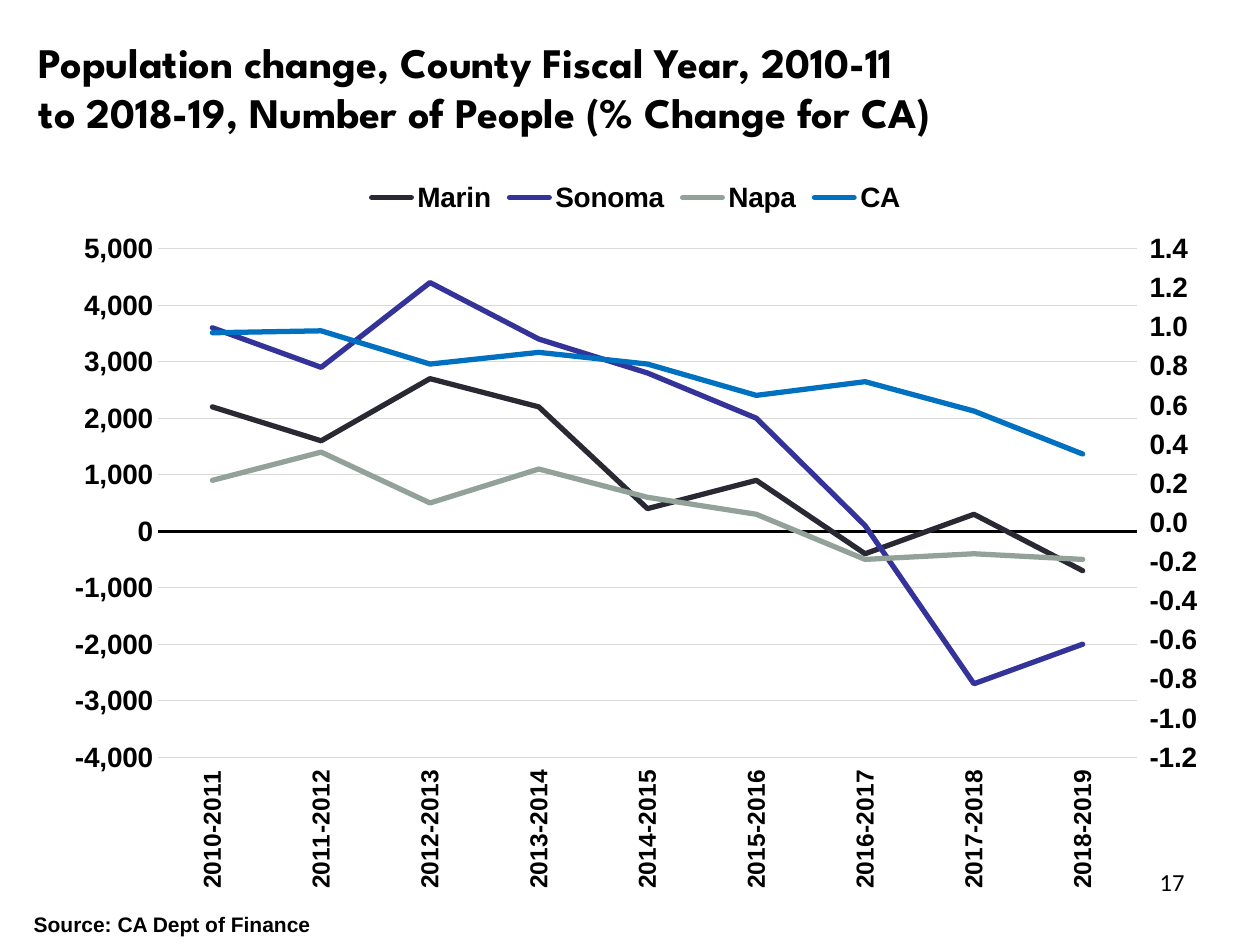
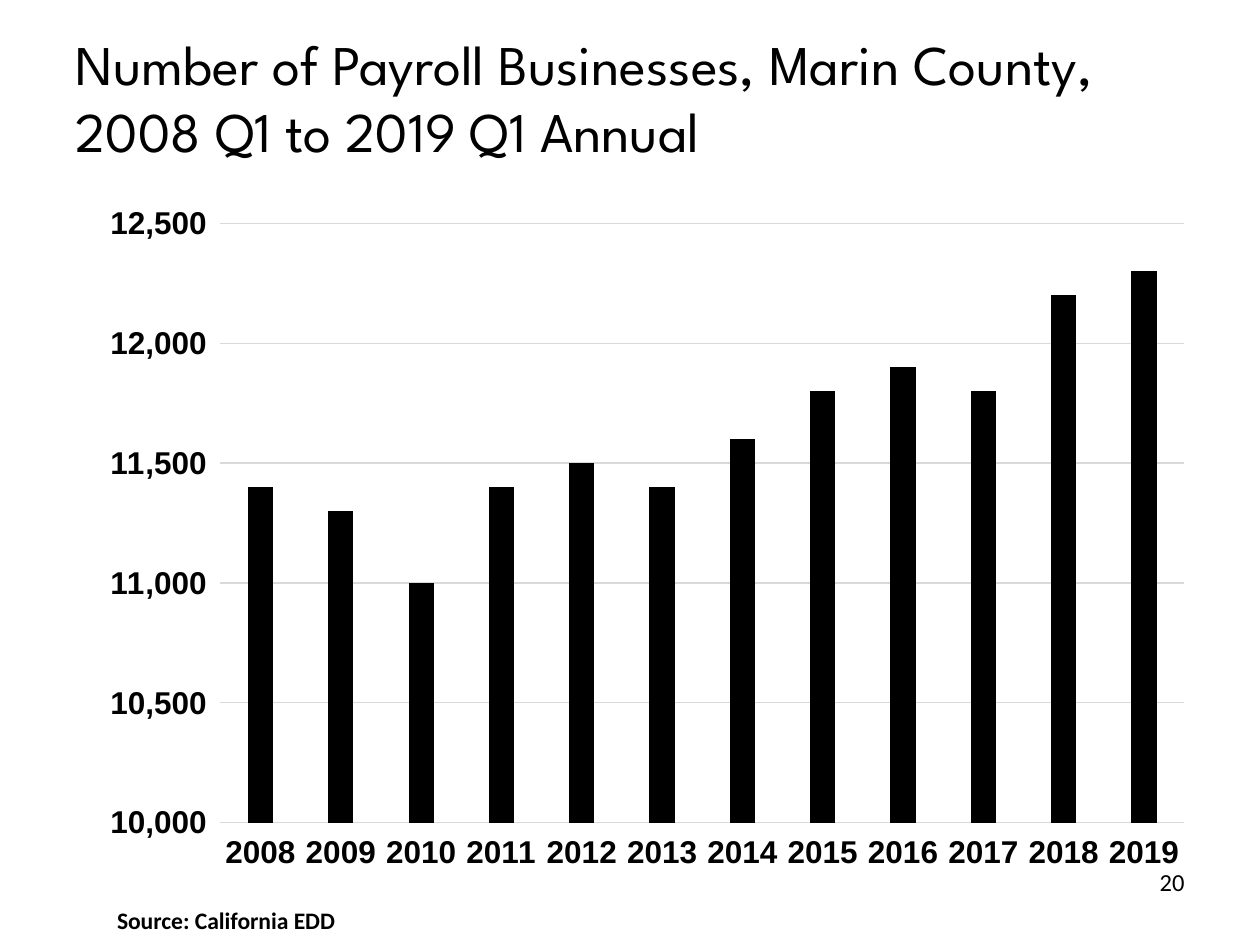
"""Build two county statistics slides: population change and payroll businesses."""
from copy import deepcopy

from lxml.etree import SubElement
from pptx import Presentation
from pptx.chart.axis import CategoryAxis, ValueAxis
from pptx.chart.data import CategoryChartData
from pptx.dml.color import RGBColor
from pptx.enum.chart import XL_CHART_TYPE as ChartType
from pptx.enum.chart import XL_LEGEND_POSITION as LegendPosition
from pptx.enum.chart import XL_TICK_LABEL_POSITION as LabelPosition
from pptx.enum.chart import XL_TICK_MARK as TickMark
from pptx.enum.text import MSO_ANCHOR as Anchor
from pptx.enum.text import MSO_AUTO_SIZE as AutoSize
from pptx.enum.text import PP_ALIGN as Align
from pptx.oxml.ns import qn
from pptx.util import Cm, Pt

COLORS = {
    "ink": "000000",
    "grid": "D9D9D9",
    "Marin": "292934",
    "Sonoma": "333399",
    "Napa": "93A299",
    "CA": "0070C0",
}
TITLE_FONT, CHART_FONT, NOTE_FONT = "League Spartan", "Arial", "Calibri"

POPULATION = {
    "Marin": (2200, 1600, 2700, 2200, 400, 900, -400, 300, -700),
    "Sonoma": (3600, 2900, 4400, 3400, 2800, 2000, 100, -2700, -2000),
    "Napa": (900, 1400, 500, 1100, 600, 300, -500, -400, -500),
    "CA": (0.97, 0.98, 0.81, 0.87, 0.81, 0.65, 0.72, 0.57, 0.35),
}
BUSINESSES = (11400, 11300, 11000, 11400, 11500, 11400,
              11600, 11800, 11900, 11800, 12200, 12300)


def color(name):
    return RGBColor.from_string(COLORS[name])


class SlideBuilder:
    """Holds the deck, its style and the current page."""

    def __init__(self):
        self.deck = Presentation()
        self.deck.slide_width, self.deck.slide_height = Cm(25.4), Cm(19.05)
        self.page = None

    def add_page(self):
        self.page = self.deck.slides.add_slide(self.deck.slide_layouts[5])

    def style_font(self, font, name, size, bold):
        font.name, font.size, font.bold = name, Pt(size), bold
        font.color.rgb = color("ink")

    def add_lines(self, frame, lines, font_name, size, bold, align):
        para = frame.paragraphs[0]
        para.alignment = align
        for number, line in enumerate(lines):
            if number:
                para.add_line_break()
            span = para.add_run()
            span.text = line
            self.style_font(span.font, font_name, size, bold)

    def title(self, lines, place, size, bold=False):
        box = self.page.shapes.title
        box.left, box.top, box.width, box.height = map(Cm, place)
        frame = box.text_frame
        frame.auto_size = AutoSize.NONE
        frame.vertical_anchor = Anchor.MIDDLE
        self.add_lines(frame, lines, TITLE_FONT, size, bold, Align.LEFT)

    def text(self, words, place, font_name, size, bold=True, align=Align.LEFT):
        frame = self.page.shapes.add_textbox(*map(Cm, place)).text_frame
        frame.word_wrap = True
        self.add_lines(frame, [words], font_name, size, bold, align)

    def page_number(self, number):
        self.text(number, (18.21, 17.35, 5.92, 1.32), NOTE_FONT, 14, False, Align.RIGHT)

    def chart(self, kind, categories, series, place, plot_area, size):
        data = CategoryChartData()
        data.categories = categories
        for name, values in series.items():
            data.add_series(name, values)
        chart = self.page.shapes.add_chart(kind, *map(Cm, place), data).chart
        chart.has_title = chart.has_legend = False
        self.style_font(chart.font, CHART_FONT, size, True)
        chart.plots[0].vary_by_categories = False
        self.place_plot(chart, plot_area)
        return chart

    def place_plot(self, chart, plot_area):
        area = chart.element.find(".//" + qn("c:plotArea"))
        for old in area.findall(qn("c:layout")):
            area.remove(old)
        layout = SubElement(area, qn("c:layout"))
        area.insert(0, layout)
        manual = SubElement(layout, qn("c:manualLayout"))
        settings = [("layoutTarget", "inner"), ("xMode", "edge"), ("yMode", "edge")]
        for tag, value in settings + list(zip("xywh", plot_area)):
            SubElement(manual, qn("c:" + tag)).set("val", str(value))

    def category_axis(self, chart, size, line_color, width):
        axis = chart.category_axis
        axis.major_tick_mark = axis.minor_tick_mark = TickMark.NONE
        axis.tick_label_position = LabelPosition.LOW
        axis.format.line.color.rgb = color(line_color)
        axis.format.line.width = Pt(width)
        self.style_font(axis.tick_labels.font, CHART_FONT, size, True)

    def scale(self, axis, low, high, step, number_format):
        axis.minimum_scale, axis.maximum_scale, axis.major_unit = low, high, step
        axis.tick_labels.number_format = number_format
        axis.tick_labels.number_format_is_linked = False

    def value_axis(self, chart, size, low, high, step, number_format):
        axis = chart.value_axis
        axis.major_tick_mark = axis.minor_tick_mark = TickMark.NONE
        axis.format.line.fill.background()
        grid = axis.major_gridlines.format.line
        grid.color.rgb, grid.width = color("grid"), Pt(0.75)
        self.style_font(axis.tick_labels.font, CHART_FONT, size, True)
        self.scale(axis, low, high, step, number_format)

    def legend(self, chart, size):
        chart.has_legend = True
        chart.legend.position = LegendPosition.TOP
        chart.legend.include_in_layout = False
        self.style_font(chart.legend.font, CHART_FONT, size, True)

    def color_lines(self, chart):
        for series in chart.plots[0].series:
            series.smooth = False
            line = series.format.line
            line.color.rgb, line.width = color(series.name), Pt(3)
        for outline in chart.element.iterfind(f".//{qn('c:ser')}/{qn('c:spPr')}/{qn('a:ln')}"):
            outline.set("cap", "rnd")

    def turn_category_labels(self, chart):
        labels = chart.element.find(f".//{qn('c:catAx')}/{qn('c:txPr')}/{qn('a:bodyPr')}")
        labels.set("rot", "-5400000")
        labels.set("vert", "horz")

    def move_last_series_right(self, chart, low, high, step, number_format):
        area = chart.element.find(".//" + qn("c:plotArea"))
        left_lines = area.find(qn("c:lineChart"))
        right_lines = deepcopy(left_lines)
        for series in right_lines.findall(qn("c:ser"))[:-1]:
            right_lines.remove(series)
        left_lines.remove(left_lines.findall(qn("c:ser"))[-1])
        left_lines.addnext(right_lines)

        left_axes = [area.find(qn("c:catAx")), area.find(qn("c:valAx"))]
        categories, values = map(deepcopy, left_axes)
        left_axes[1].addnext(values)
        values.addnext(categories)
        new_ids = dict(zip((axis.find(qn("c:axId")).get("val") for axis in left_axes),
                           ("50010", "50020")))
        for owner in (right_lines, categories, values):
            for tag in ("c:axId", "c:crossAx"):
                for link in owner.findall(qn(tag)):
                    link.set("val", new_ids[link.get("val")])
        values.find(qn("c:axPos")).set("val", "r")
        values.find(qn("c:crosses")).set("val", "max")

        CategoryAxis(categories).visible = False
        right_axis = ValueAxis(values)
        right_axis.has_major_gridlines = False
        right_axis.major_tick_mark = TickMark.OUTSIDE
        self.scale(right_axis, low, high, step, number_format)


def population_page(builder):
    builder.add_page()
    builder.title(["Population change, County Fiscal Year, 2010-11",
                   "to 2018-19, Number of People (% Change for CA)"],
                  (0.53, 0.38, 24.33, 2.74), 24, True)
    builder.page_number("17")
    builder.text("Source: CA Dept of Finance", (0.43, 18.26, 6.6, 0.76), CHART_FONT, 12)
    years = [f"{year}-{year + 1}" for year in range(2010, 2019)]
    chart = builder.chart(ChartType.LINE, years, POPULATION,
                          (1.07, 3.38, 23.5, 14.86), (0.09, 0.11, 0.84, 0.69), 16)
    builder.category_axis(chart, 14, "ink", 1.75)
    builder.turn_category_labels(chart)
    builder.value_axis(chart, 16, -4000, 5000, 1000, "#,##0")
    builder.legend(chart, 16)
    builder.color_lines(chart)
    builder.move_last_series_right(chart, -1.2, 1.4, 0.2, "0.0")


def businesses_page(builder):
    builder.add_page()
    builder.title(["Number of Payroll Businesses, Marin County, 2008 Q1 to 2019 Q1 Annual"],
                  (1.27, 0.76, 22.86, 2.36), 32)
    builder.page_number("20")
    years = [str(year) for year in range(2008, 2020)]
    chart = builder.chart(ChartType.COLUMN_CLUSTERED, years, {"Series 1": BUSINESSES},
                          (1.47, 3.81, 22.86, 13.89), (0.13, 0.05, 0.85, 0.87), 18)
    builder.category_axis(chart, 18, "grid", 0.75)
    builder.value_axis(chart, 18, 10000, 12500, 500,
                       r'_(* #,##0_);_(* \(#,##0\);_(* "-"??_);_(@_)')
    plot = chart.plots[0]
    plot.gap_width, plot.overlap = 219, -27
    fill = plot.series[0].format.fill
    fill.solid()
    fill.fore_color.rgb = color("ink")
    builder.text("Source: California EDD", (2.11, 18.14, 13.97, 0.84), NOTE_FONT, 13.5)


def main():
    builder = SlideBuilder()
    population_page(builder)
    businesses_page(builder)
    builder.deck.save("out.pptx")


if __name__ == "__main__":
    main()
